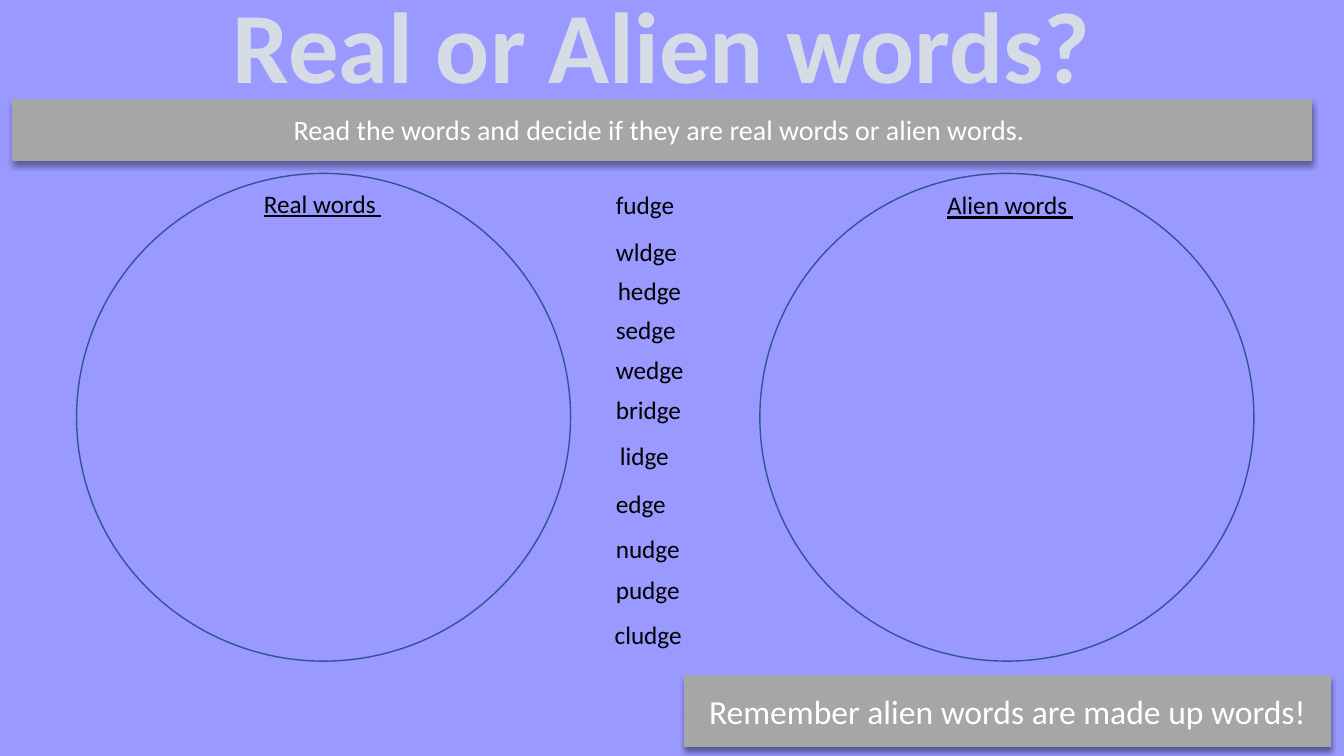
from dataclasses import dataclass

from lxml import etree
from pptx import Presentation
from pptx.dml.color import RGBColor
from pptx.enum.dml import MSO_PATTERN
from pptx.enum.shapes import MSO_SHAPE
from pptx.enum.text import MSO_ANCHOR, MSO_AUTO_SIZE, PP_ALIGN
from pptx.oxml import parse_xml
from pptx.oxml.ns import nsdecls, qn
from pptx.util import Cm, Pt

RECT, OVAL = MSO_SHAPE.RECTANGLE, MSO_SHAPE.OVAL
CENTER, LEFT = PP_ALIGN.CENTER, PP_ALIGN.LEFT
TOP, MIDDLE = MSO_ANCHOR.TOP, MSO_ANCHOR.MIDDLE
GROW = MSO_AUTO_SIZE.SHAPE_TO_FIT_TEXT
STRIPES = MSO_PATTERN.DARK_UPWARD_DIAGONAL
TITLE_ONLY = 5


@dataclass(frozen=True)
class Theme:
    font: str = "Calibri"
    background: str = "9999FF"
    bar: str = "A6A6A6"
    bar_text: str = "FFFFFF"
    circle: str = "325491"
    ink: str = "000000"
    title_back: str = "D6DCE5"
    title_stripes: str = "44546A"
    title_outline: str = "333F50"
    title_size: int = 72
    reminder_size: int = 24
    instruction_size: int = 20
    word_size: int = 18
    line: float = 1


def rgb(color):
    return RGBColor.from_string(color)


class SlideBuilder:
    def __init__(self, prs, theme):
        self.theme = theme
        self.slide = prs.slides.add_slide(prs.slide_layouts[TITLE_ONLY])
        fill = self.slide.background.fill
        fill.solid()
        fill.fore_color.rgb = rgb(theme.background)

    def set_text(self, sp, text, size, align, anchor):
        """Set the text of a shape and return its formatted run font."""
        tf = sp.text_frame
        tf.text = text
        tf.vertical_anchor = anchor
        p = tf.paragraphs[0]
        p.alignment = align
        font = p.runs[0].font
        font.name = self.theme.font
        font.size = Pt(size)
        return font

    def fit(self, sp):
        """Keep the text on one line in a box that grows with it."""
        sp.text_frame.word_wrap = False
        sp.text_frame.auto_size = GROW

    def title(self, text, left, top, width, height):
        t = self.theme
        sp = self.slide.shapes.title
        sp.left, sp.top, sp.width, sp.height = Cm(left), Cm(top), Cm(width), Cm(height)
        font = self.set_text(sp, text, t.title_size, CENTER, TOP)
        self.fit(sp)
        font.bold = True
        font.fill.patterned()
        font.fill.pattern = STRIPES
        font.fill.fore_color.rgb = rgb(t.title_stripes)
        font.fill.back_color.rgb = rgb(t.title_back)
        r_pr = sp.text_frame.paragraphs[0].runs[0]._r.get_or_add_rPr()
        r_pr.insert(0, parse_xml(
            f'<a:ln {nsdecls("a")} w="{Pt(t.line)}"><a:solidFill>'
            f'<a:srgbClr val="{t.title_outline}"/></a:solidFill></a:ln>'))

    def shape(self, kind, left, top, width, height, line):
        sp = self.slide.shapes.add_shape(kind, Cm(left), Cm(top), Cm(width), Cm(height))
        sp.shadow.inherit = False
        sp.line.color.rgb = rgb(line)
        sp.line.width = Pt(self.theme.line)
        return sp

    def bar(self, text, size, *box):
        t = self.theme
        sp = self.shape(RECT, *box, t.bar)
        sp.fill.solid()
        sp.fill.fore_color.rgb = rgb(t.bar)
        self.set_text(sp, text, size, CENTER, MIDDLE).color.rgb = rgb(t.bar_text)
        self.drop_shadow(sp)

    def drop_shadow(self, sp):
        effects = sp._element.spPr.find(qn("a:effectLst"))
        shadow = etree.SubElement(effects, qn("a:outerShdw"), blurRad=str(Pt(4)),
                                  dist=str(Pt(3)), dir="5400000", rotWithShape="0")
        color = etree.SubElement(shadow, qn("a:srgbClr"), val=self.theme.ink)
        etree.SubElement(color, qn("a:alpha"), val="40000")

    def circle(self, *box):
        self.shape(OVAL, *box, self.theme.circle).fill.background()

    def label(self, text, left, top, width, underline=False):
        sp = self.slide.shapes.add_textbox(Cm(left), Cm(top), Cm(width), Cm(1.02))
        font = self.set_text(sp, text, self.theme.word_size, LEFT, TOP)
        self.fit(sp)
        font.color.rgb = rgb(self.theme.ink)
        if underline:
            font.underline = True


# word, left, top, width in cm
WORDS = [
    ("fudge", 15.27, 4.65, 2.16),
    ("wldge", 15.27, 5.82, 2.21),
    ("hedge", 15.32, 6.81, 2.29),
    ("sedge", 15.27, 7.8, 2.18),
    ("wedge", 15.27, 8.81, 2.39),
    ("bridge", 15.27, 9.8, 2.34),
    ("lidge", 15.37, 10.97, 1.91),
    ("edge", 15.27, 12.17, 1.93),
    ("nudge", 15.27, 13.31, 2.29),
    ("pudge", 15.27, 14.35, 2.29),
    ("cludge", 15.24, 15.49, 2.36),
]
HEADINGS = [
    ("Real words ", 6.4, 4.62, 3.51),
    ("Alien words ", 23.62, 4.65, 3.73),
]
CIRCLE_LEFTS = (1.93, 19.15)


def main():
    prs = Presentation()
    prs.slide_width, prs.slide_height = Cm(33.87), Cm(19.05)
    theme = Theme()
    s = SlideBuilder(prs, theme)

    s.title("Real or Alien words?", 5.51, -0.56, 22.35, 3.33)
    s.bar("Read the words and decide if they are real words or alien words. ",
          theme.instruction_size, 0.33, 2.51, 32.72, 1.52)
    s.bar("Remember alien words are made up words!",
          theme.reminder_size, 17.25, 17.02, 16.28, 1.8)
    for left in CIRCLE_LEFTS:
        s.circle(left, 4.37, 12.45, 12.29)
    for word in WORDS:
        s.label(*word)
    for heading in HEADINGS:
        s.label(*heading, underline=True)

    prs.save("out.pptx")


if __name__ == "__main__":
    main()
